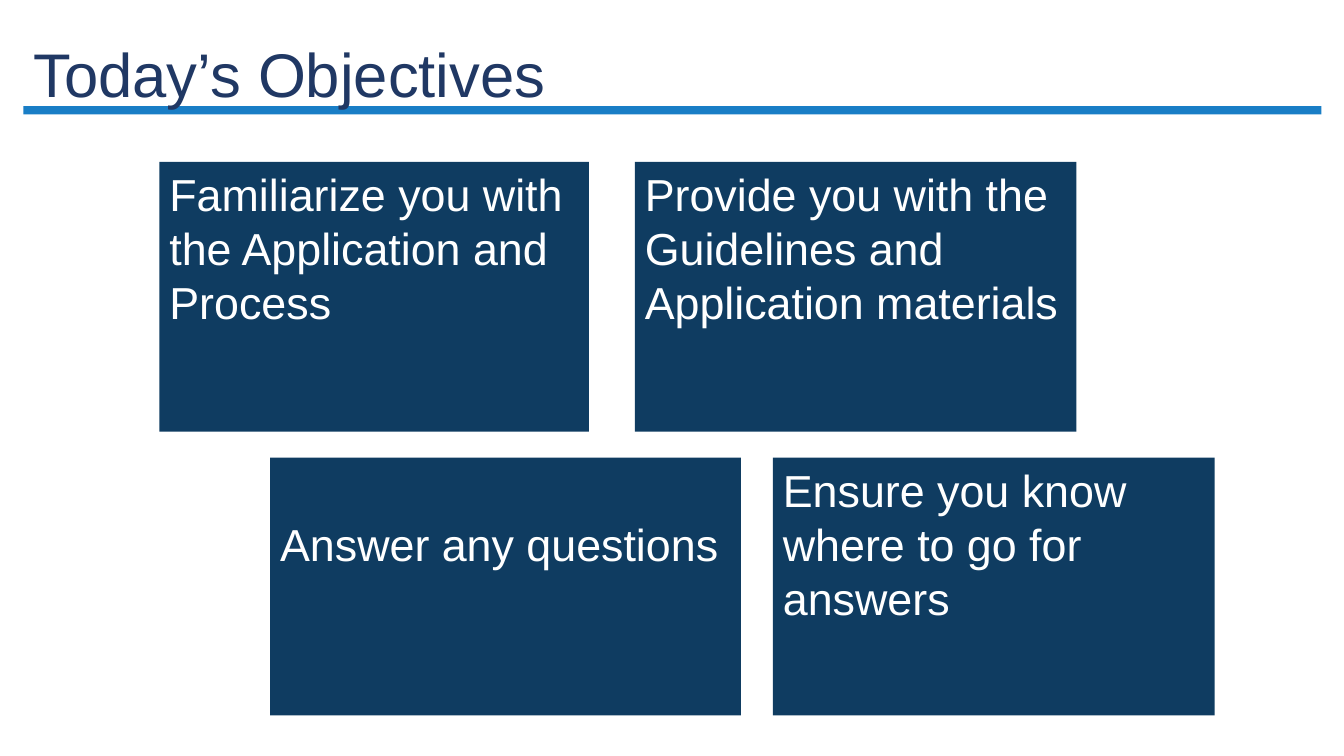
from lxml.etree import SubElement
from pptx import Presentation
from pptx.dml.color import RGBColor
from pptx.enum.shapes import MSO_CONNECTOR, MSO_SHAPE
from pptx.enum.text import MSO_ANCHOR, PP_ALIGN
from pptx.oxml.ns import qn
from pptx.util import Cm, Pt

TITLE = "Today’s Objectives"
COLOURS = {"title": "203864", "rule": "0070C0", "card": "0F3C61", "text": "FFFFFF"}
FONT = "Arial"
INSET = 0.13  # cm

# Each row: top, height, then cards as (left, width, space above text, text), in cm
ROWS = [
    (4.08, 6.8, [
        (4.02, 10.82, INSET, "Familiarize you with the Application and Process"),
        (16.0, 11.13, INSET, "Provide you with the Guidelines and Application materials"),
    ]),
    (11.53, 6.5, [
        (6.81, 11.86, 1.48, "Answer any questions"),
        (19.48, 11.13, INSET, "Ensure you know where to go for answers"),
    ]),
]


def write(box, text, *, size, colour, anchor=MSO_ANCHOR.TOP, top=INSET, spacing=None):
    frame = box.text_frame
    frame.word_wrap = True
    frame.vertical_anchor = anchor
    frame.margin_top = Cm(top)
    para = frame.paragraphs[0]
    para.alignment = PP_ALIGN.LEFT
    if spacing:
        para.line_spacing = spacing
    span = para.add_run()
    span.text = text
    span.font.name = FONT
    span.font.size = Pt(size)
    span.font.color.rgb = RGBColor.from_string(COLOURS[colour])


deck = Presentation()
deck.slide_width, deck.slide_height = Cm(33.87), Cm(19.05)
page = deck.slides.add_slide(deck.slide_layouts[6])

# Rule under the title, slightly transparent
rule = page.shapes.add_connector(
    MSO_CONNECTOR.STRAIGHT, Cm(33.3), Cm(2.78), Cm(0.59), Cm(2.78))
rule.line.width = Pt(6)
rule.line.color.rgb = RGBColor.from_string(COLOURS["rule"])
properties = rule.element.spPr
colour_element = next(properties.iter(qn("a:srgbClr")))
SubElement(colour_element, qn("a:alpha"), val="90000")
SubElement(properties, qn("a:effectLst"))

# Title
title = page.shapes.add_textbox(Cm(0.59), Cm(1.02), Cm(30.96), Cm(1.88))
write(title, TITLE, size=44, colour="title", anchor=MSO_ANCHOR.MIDDLE, spacing=0.9)

# Objective cards
for top, height, cards in ROWS:
    for left, width, space, text in cards:
        card = page.shapes.add_shape(
            MSO_SHAPE.RECTANGLE, Cm(left), Cm(top), Cm(width), Cm(height))
        card.shadow.inherit = False
        card.fill.solid()
        card.fill.fore_color.rgb = RGBColor.from_string(COLOURS["card"])
        card.line.fill.background()
        write(card, text, size=32, colour="text", top=space)

deck.save("out.pptx")
